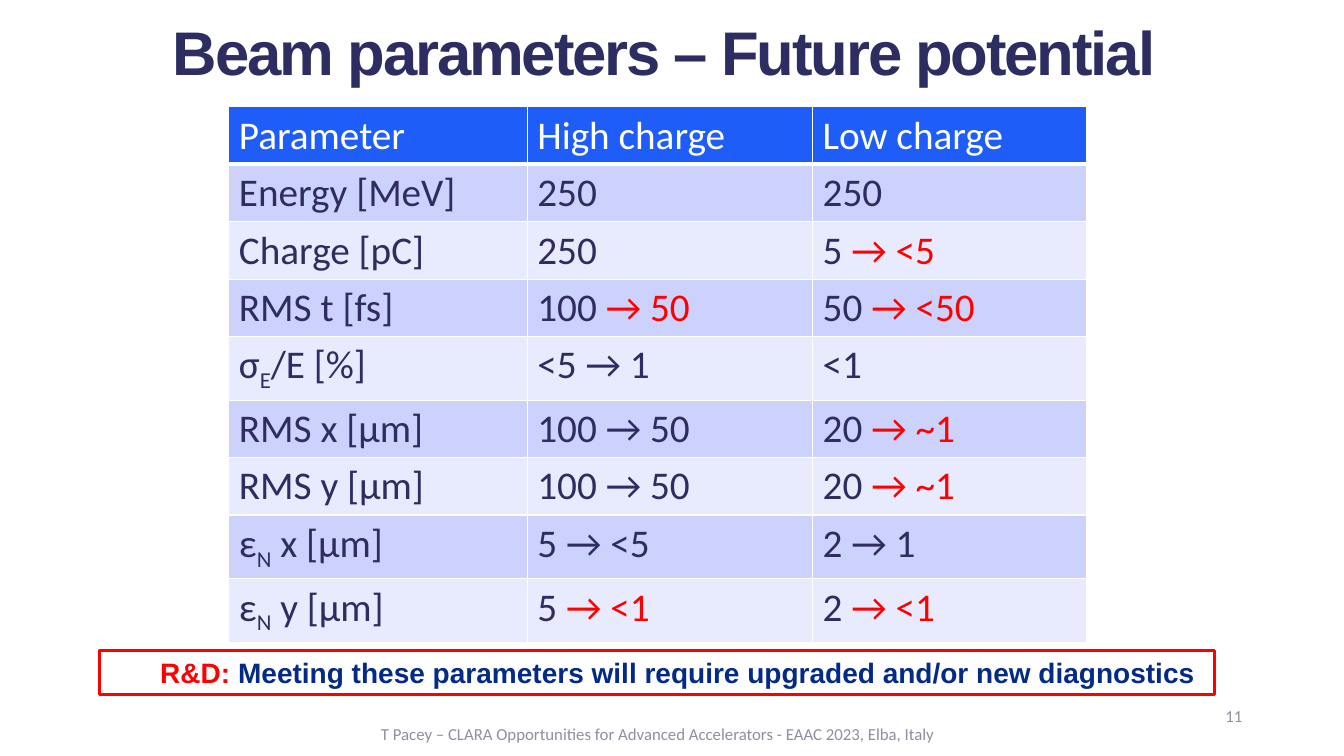
from dataclasses import dataclass

from pptx import Presentation
from pptx import util as u
from pptx.dml.color import RGBColor
from pptx.enum import shapes, text
from pptx.oxml import parse_xml
from pptx.oxml.ns import nsdecls

PX = 9144  # EMU; 100 px to the inch


@dataclass(frozen=True)
class Theme:
    title: str = "2E2D62"
    ink: str = "2E2C61"
    navy: str = "042A87"
    red: str = "FF0000"
    white: str = "FFFFFF"
    grey: str = "8F8F9E"
    header: str = "1E5DF8"
    bands: tuple = ("CDD2FC", "E8EAFE")
    heading_font: str = "Arial"
    body_font: str = "Calibri"
    title_size: int = 44
    table_size: int = 28
    banner_size: int = 20
    footer_size: int = 12


T = Theme()

# Cell markup: "_" encloses a subscript, "|" starts the upgraded value in red
PARAMETERS = [
    ("Parameter", "High charge", "Low charge"),
    ("Energy [MeV]", "250", "250"),
    ("Charge [pC]", "250", "5 |→ <5"),
    ("RMS t [fs]", "100 |→ 50", "50 |→ <50"),
    ("σ_E_/E [%]", "<5 → 1", "<1"),
    ("RMS x [µm]", "100 → 50", "20 |→ ~1"),
    ("RMS y [µm]", "100 → 50", "20 |→ ~1"),
    ("ε_N_ x [µm]", "5 → <5", "2 → 1"),
    ("ε_N_ y [µm]", "5 |→ <1", "2 |→ <1"),
]
COLUMN_WIDTHS = (296, 283, 272)
ROW_HEIGHT = 57


def px(*lengths):
    return [u.Emu(length * PX) for length in lengths]


def rgb(colour):
    return RGBColor.from_string(colour)


def add_run(paragraph, words, font, size, colour, bold=False):
    run = paragraph.add_run()
    run.text = words
    run.font.name = font
    run.font.size = u.Pt(size)
    run.font.color.rgb = rgb(colour)
    run.font.bold = bold
    return run


def add_label(slide, box, align, anchor):
    frame = slide.shapes.add_textbox(*px(*box)).text_frame
    frame.word_wrap = True
    frame.vertical_anchor = anchor
    frame.paragraphs[0].alignment = align
    return frame


def add_title(slide, box):
    frame = add_label(slide, box, text.PP_ALIGN.CENTER, text.MSO_ANCHOR.TOP)
    frame.margin_right = px(25)[0]
    run = add_run(frame.paragraphs[0], "Beam parameters – Future potential",
                  T.heading_font, T.title_size, T.title, bold=True)
    run.font._element.set("spc", "-150")


def set_borders(cell, bottom_width):
    properties = cell._tc.get_or_add_tcPr()
    for side, width in zip("LRTB", (1, 1, 1, bottom_width)):
        properties.append(parse_xml(
            f'<a:ln{side} {nsdecls("a")} w="{u.Pt(width)}"><a:solidFill>'
            f'<a:srgbClr val="{T.white}"/></a:solidFill></a:ln{side}>'))


def fill_cell(cell, markup, colour):
    paragraph = cell.text_frame.paragraphs[0]
    present, _, upgraded = markup.partition("|")
    for index, piece in enumerate(present.split("_")):
        run = add_run(paragraph, piece, T.body_font, T.table_size, colour)
        if index % 2:
            run.font._element.set("baseline", "-25000")
    if upgraded:
        add_run(paragraph, upgraded, T.body_font, T.table_size, T.red)


def add_parameter_table(slide, left, top):
    box = (left, top, sum(COLUMN_WIDTHS), ROW_HEIGHT * len(PARAMETERS))
    table = slide.shapes.add_table(
        len(PARAMETERS), len(COLUMN_WIDTHS), *px(*box)).table
    table.first_row = table.horz_banding = False
    for column, width in zip(table.columns, px(*COLUMN_WIDTHS)):
        column.width = width
    for r, parameter in enumerate(PARAMETERS):
        is_header = r == 0
        for c, markup in enumerate(parameter):
            cell = table.cell(r, c)
            set_borders(cell, 3 if is_header else 1)
            cell.fill.solid()
            cell.fill.fore_color.rgb = rgb(
                T.header if is_header else T.bands[(r - 1) % 2])
            fill_cell(cell, markup, T.white if is_header else T.ink)


def add_diagnostics_banner(slide, box):
    banner = slide.shapes.add_shape(shapes.MSO_SHAPE.RECTANGLE, *px(*box))
    banner.shadow.inherit = False
    banner.fill.background()
    banner.line.color.rgb = rgb(T.red)
    banner.line.width = u.Pt(2.25)
    message = banner.text_frame.paragraphs[0]
    message.alignment = text.PP_ALIGN.LEFT
    message.level = 1
    indent = message._p.get_or_add_pPr()
    indent.set("marL", str(50 * PX))
    indent.set("indent", "0")
    for words, colour in (
            ("R&D: ", T.red),
            ("Meeting these parameters will require upgraded and/or new diagnostics",
             T.navy)):
        add_run(message, words, T.heading_font, T.banner_size, colour, bold=True)


def add_footer(slide, left, top):
    number = add_label(slide, (left + 579, top, 300, 40),
                       text.PP_ALIGN.RIGHT, text.MSO_ANCHOR.TOP)
    credit = add_label(slide, (left, top + 13, 579, 40),
                       text.PP_ALIGN.CENTER, text.MSO_ANCHOR.MIDDLE)
    for frame, words in (
            (number, "11"),
            (credit, "T Pacey – CLARA Opportunities for Advanced Accelerators"
                     " - EAAC 2023, Elba, Italy")):
        add_run(frame.paragraphs[0], words, T.body_font, T.footer_size, T.grey)


def main():
    deck = Presentation()
    deck.slide_width, deck.slide_height = px(1333, 750)
    slide = deck.slides.add_slide(deck.slide_layouts[6])
    add_title(slide, (0, 9, 1333, 84))
    add_parameter_table(slide, 227, 106)
    add_diagnostics_banner(slide, (99, 645, 1106, 44))
    add_footer(slide, 363, 695)
    deck.save("out.pptx")


if __name__ == "__main__":
    main()
